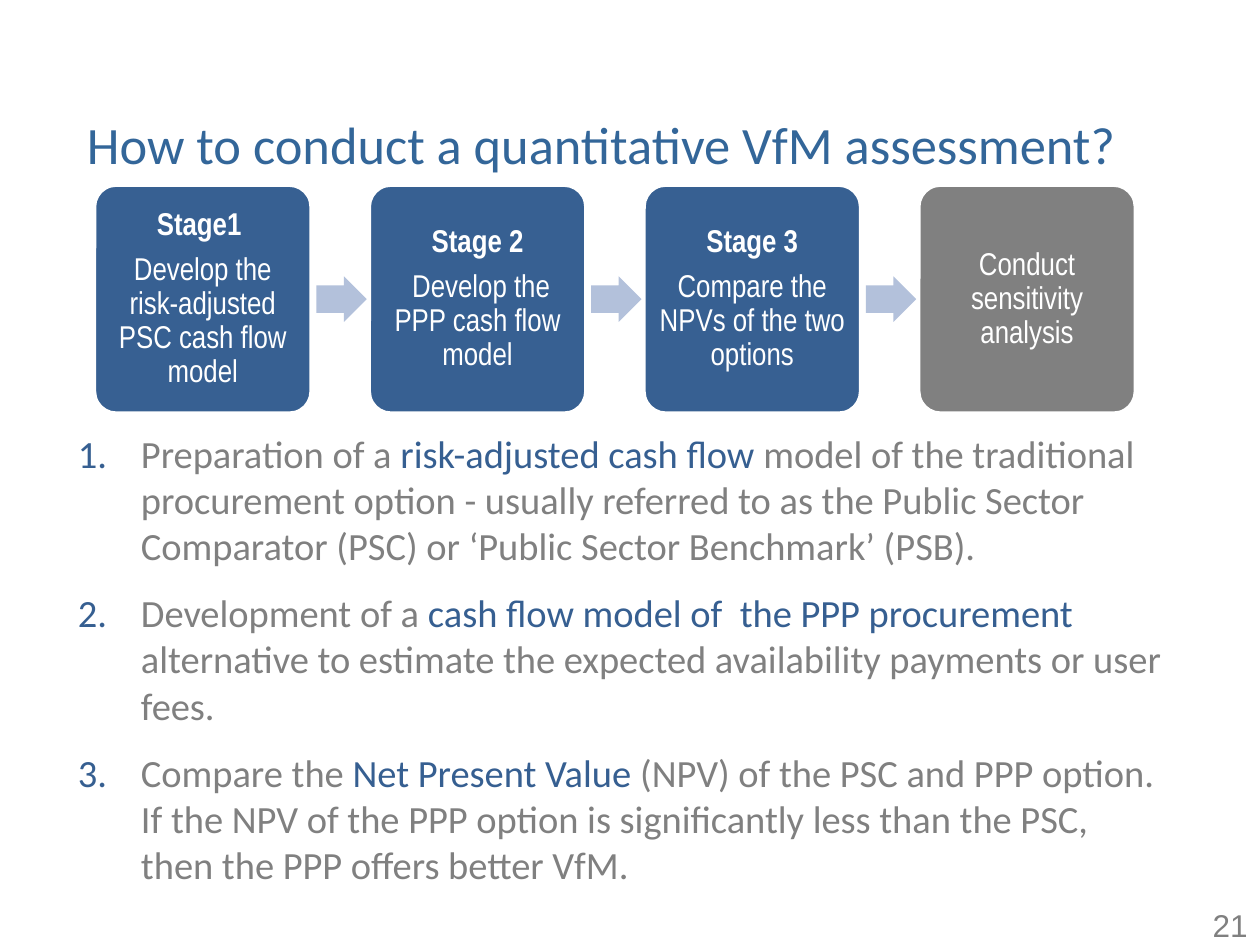
from pptx import Presentation
from pptx.dml.color import RGBColor
from pptx.enum.shapes import MSO_SHAPE as Shape
from pptx.enum.text import MSO_ANCHOR as Anchor, PP_ALIGN as Align
from pptx.oxml import parse_xml
from pptx.oxml.ns import nsdecls
from pptx.util import Pt

TITLE_BLUE = RGBColor(0x33, 0x66, 0x99)
TEXT_BLUE = RGBColor(0x36, 0x5F, 0x91)
STAGE_BLUE = RGBColor(0x37, 0x60, 0x92)
ARROW_BLUE = RGBColor(0xB3, 0xC1, 0xDB)
GREY = RGBColor(0x80, 0x80, 0x80)
WHITE = RGBColor(0xFF, 0xFF, 0xFF)

STAGE_LEFT, STAGE_TOP, STAGE_WIDTH, STAGE_HEIGHT = 54, 105.8, 123.8, 130.3
STAGE_PITCH = 157
ARROW_WIDTH, ARROW_HEIGHT = 28.8, 26

STAGES = [
    ("Stage1 ", "Develop the risk-adjusted PSC cash flow model", STAGE_BLUE),
    ("Stage 2", " Develop the PPP cash flow model", STAGE_BLUE),
    ("Stage 3", "Compare the NPVs of the two options", STAGE_BLUE),
    (None, "Conduct sensitivity analysis", GREY),
]

# Each step: lead-in, highlighted phrase, remainder
STEPS = [
    ("Preparation of a ", "risk-adjusted cash flow ",
     "model of the traditional procurement option - usually referred to as the "
     "Public Sector Comparator (PSC) or ‘Public Sector Benchmark’ (PSB)."),
    ("Development of a ", "cash flow model of  the PPP procurement ",
     "alternative to estimate the expected availability payments or user fees."),
    ("Compare the ", "Net Present Value ",
     "(NPV) of the PSC and PPP option. If the NPV of the PPP option is "
     "significantly less than the PSC, then the PPP offers better VfM."),
]


class SlideBuilder:
    heading_font = "Calibri"
    stage_font = "Arial Narrow"
    number_font = "Arial"

    def __init__(self, page):
        self.page = page

    def add_span(self, para, text, font, size, color, bold=False):
        span = para.add_run()
        span.text = text
        span.font.name = font
        span.font.size = Pt(size)
        span.font.color.rgb = color
        span.font.bold = bold

    def next_paragraph(self, frame, index):
        return frame.add_paragraph() if index else frame.paragraphs[0]

    def add_title(self, text, left, top, width, height):
        title = self.page.shapes.title
        title.left, title.top = Pt(left), Pt(top)
        title.width, title.height = Pt(width), Pt(height)
        frame = title.text_frame
        frame.vertical_anchor = Anchor.TOP
        para = frame.paragraphs[0]
        para.alignment = Align.LEFT
        self.add_span(para, text, self.heading_font, 30, TITLE_BLUE)

    def add_text_box(self, left, top, width, height):
        box = self.page.shapes.add_textbox(Pt(left), Pt(top), Pt(width), Pt(height))
        box.text_frame.word_wrap = True
        return box.text_frame

    def add_shape(self, kind, left, top, width, height, fill):
        shape = self.page.shapes.add_shape(
            kind, Pt(left), Pt(top), Pt(width), Pt(height))
        shape.shadow.inherit = False
        shape.fill.solid()
        shape.fill.fore_color.rgb = fill
        shape.line.fill.background()
        return shape

    def add_stage(self, left, heading, text, fill):
        card = self.add_shape(Shape.ROUNDED_RECTANGLE, left, STAGE_TOP,
                              STAGE_WIDTH, STAGE_HEIGHT, fill)
        card.adjustments[0] = 0.1
        card.line.color.rgb = WHITE
        card.line.width = Pt(2)
        frame = card.text_frame
        frame.word_wrap = True
        frame.vertical_anchor = Anchor.MIDDLE
        frame.margin_left = frame.margin_right = Pt(5)
        frame.margin_top = frame.margin_bottom = Pt(5)
        lines = [(heading, True), (text, False)] if heading else [(text, False)]
        for index, (line, bold) in enumerate(lines):
            para = self.next_paragraph(frame, index)
            para.alignment = Align.CENTER
            para.line_spacing = 0.9
            para.space_after = Pt(6.3)
            self.add_span(para, line, self.stage_font, 18, WHITE, bold)

    def add_arrow(self, left):
        top = STAGE_TOP + (STAGE_HEIGHT - ARROW_HEIGHT) / 2
        arrow = self.add_shape(Shape.RIGHT_ARROW, left, top,
                               ARROW_WIDTH, ARROW_HEIGHT, ARROW_BLUE)
        arrow.adjustments[0] = 0.6
        arrow.adjustments[1] = 0.5

    def number_paragraph(self, para):
        """Give the paragraph a coloured automatic number and a hanging indent."""
        properties = para._p.get_or_add_pPr()
        properties.set("marL", str(Pt(36)))
        properties.set("indent", str(Pt(-36)))
        properties.append(parse_xml(
            f'<a:buClr {nsdecls("a")}><a:srgbClr val="{TEXT_BLUE}"/></a:buClr>'))
        properties.append(parse_xml(
            f'<a:buAutoNum {nsdecls("a")} type="arabicPeriod"/>'))

    def add_steps(self, steps, left, top, width, height):
        frame = self.add_text_box(left, top, width, height)
        for index, step in enumerate(steps):
            para = self.next_paragraph(frame, index)
            self.number_paragraph(para)
            para.space_before = Pt(6 if index else 0)
            para.space_after = Pt(6)
            for text, color in zip(step, (GREY, TEXT_BLUE, GREY)):
                self.add_span(para, text, self.heading_font, 22, color)

    def add_page_number(self, text, left, top, width, height):
        para = self.add_text_box(left, top, width, height).paragraphs[0]
        para.alignment = Align.RIGHT
        self.add_span(para, text, self.number_font, 18, GREY)


def main():
    deck = Presentation()
    deck.slide_width, deck.slide_height = Pt(720), Pt(540)
    title_only = deck.slide_layouts[5]
    builder = SlideBuilder(deck.slides.add_slide(title_only))

    builder.add_title("How to conduct a quantitative VfM assessment?",
                      42.5, 60.5, 618, 57)
    for index, (heading, text, fill) in enumerate(STAGES):
        left = STAGE_LEFT + index * STAGE_PITCH
        builder.add_stage(left, heading, text, fill)
        if index < len(STAGES) - 1:
            builder.add_arrow(left + STAGE_WIDTH + 3)
    builder.add_steps(STEPS, 37.5, 242, 637, 283.5)
    builder.add_page_number("21", 552, 514, 168, 26)

    deck.save("out.pptx")


if __name__ == "__main__":
    main()
